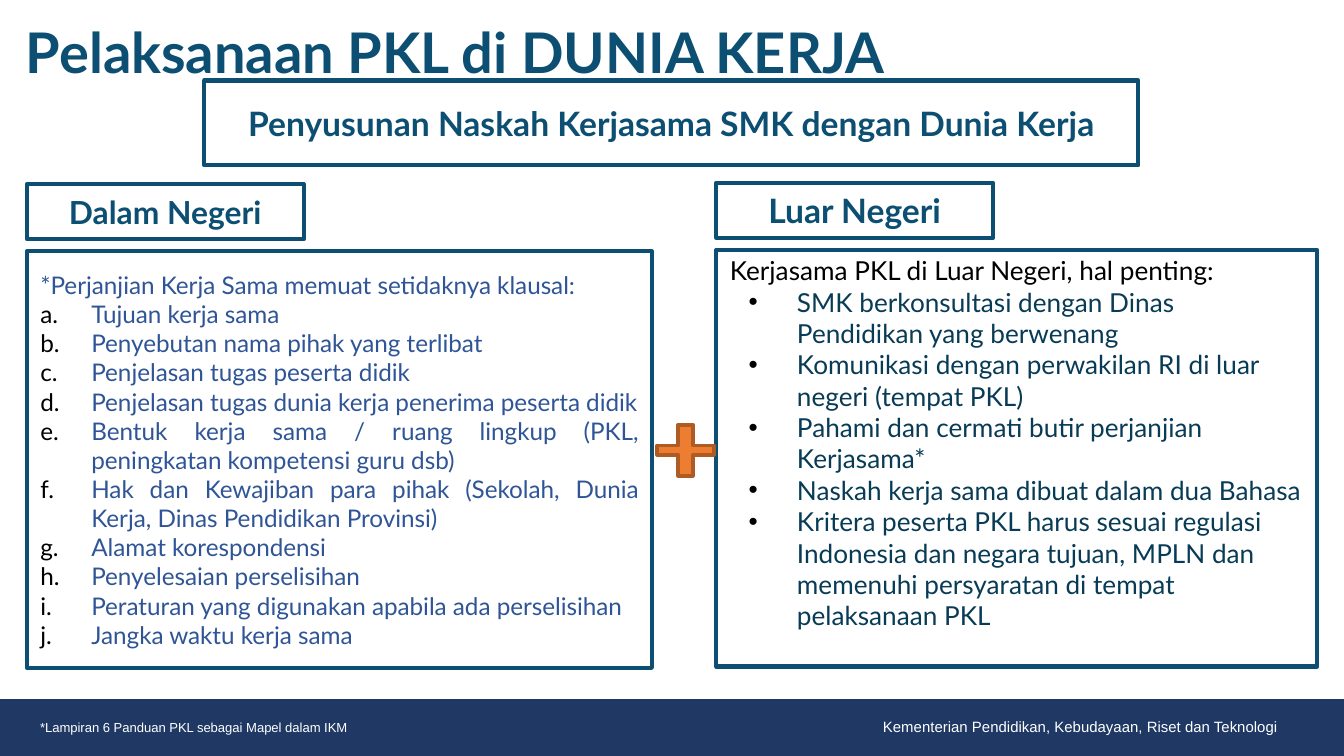
from lxml import etree
from pptx import Presentation
from pptx.dml.color import RGBColor
from pptx.enum.shapes import MSO_SHAPE
from pptx.enum.text import MSO_ANCHOR, MSO_AUTO_SIZE, PP_ALIGN
from pptx.oxml.ns import qn
from pptx.util import Inches, Pt

RECT, PLUS = MSO_SHAPE.RECTANGLE, MSO_SHAPE.CROSS
TOP, MID = MSO_ANCHOR.TOP, MSO_ANCHOR.MIDDLE
LEFT, MIDDLE, RIGHT = PP_ALIGN.LEFT, PP_ALIGN.CENTER, PP_ALIGN.RIGHT
FULL = PP_ALIGN.JUSTIFY
FIXED = MSO_AUTO_SIZE.NONE
TEAL, NAVY, WHITE, BLACK = "0C4F72", "1F3864", "FFFFFF", "000000"
rgb = RGBColor.from_string


def setup(box, at, pad=0.1, anchor=MID, edge=None):
    box.left, box.top, box.width, box.height = [Inches(v) for v in at]
    frame = box.text_frame
    frame.auto_size = FIXED
    frame.word_wrap = True
    frame.vertical_anchor = anchor
    frame.margin_left = frame.margin_right = Inches(0.1)
    frame.margin_top = frame.margin_bottom = Inches(pad)
    if edge:
        box.fill.background()
        box.line.color.rgb = rgb(edge)
        box.line.width = Pt(2.25)
    return frame


def write(para, text, size, color, align=LEFT, face="Lato", bold=False, mark=None, hang=(0, 0)):
    para.text = text
    para.alignment = align
    para.space_before = Pt(0)
    props = para._p.get_or_add_pPr()
    props.set("marL", str(Inches(hang[0])))
    props.set("indent", str(Inches(hang[1])))
    if mark:
        tint = etree.SubElement(props, qn("a:buClr"))
        etree.SubElement(tint, qn("a:srgbClr"), val=BLACK)
        etree.SubElement(props, qn("a:" + mark[0]), **mark[1])
    else:
        etree.SubElement(props, qn("a:buNone"))
    font = para.font
    font.name, font.size, font.bold = face, Pt(size), bold
    font.color.rgb = rgb(color)


deck = Presentation()
deck.slide_width = Inches(10)
deck.slide_height = Inches(10 * 9 / 16)
slide = deck.slides.add_slide(deck.slide_layouts[3])
shapes = slide.shapes
title, left, right = slide.placeholders

frame = setup(title, (-0.82, 0.03, 8.42, 0.53), anchor=TOP)
write(frame.paragraphs[0], "Pelaksanaan PKL di DUNIA KERJA", 30, TEAL, MIDDLE, bold=True)

lists = [
    (left, (0.2, 1.87, 4.65, 3.1), 13, "2F5597", "2F5597", FULL,
     ("buAutoNum", {"type": "alphaLcPeriod"}), (0.38, -0.38),
     "*Perjanjian Kerja Sama memuat setidaknya klausal:",
     ["Tujuan kerja sama",
      "Penyebutan nama pihak yang terlibat",
      "Penjelasan tugas peserta didik",
      "Penjelasan tugas dunia kerja penerima peserta didik",
      "Bentuk kerja sama / ruang lingkup (PKL, peningkatan kompetensi guru dsb)",
      "Hak dan Kewajiban para pihak (Sekolah, Dunia Kerja, Dinas Pendidikan Provinsi)",
      "Alamat korespondensi",
      "Penyelesaian perselisihan",
      "Peraturan yang digunakan apabila ada perselisihan",
      "Jangka waktu kerja sama"]),
    (right, (5.33, 1.86, 4.47, 3.1), 14, BLACK, "083B55", LEFT,
     ("buChar", {"char": "•"}), (0.5, -0.36),
     "Kerjasama PKL di Luar Negeri, hal penting:",
     ["SMK berkonsultasi dengan Dinas Pendidikan yang berwenang",
      "Komunikasi dengan perwakilan RI di luar negeri (tempat PKL)",
      "Pahami dan cermati butir perjanjian Kerjasama*",
      "Naskah kerja sama dibuat dalam dua Bahasa",
      "Kritera peserta PKL harus sesuai regulasi Indonesia dan negara tujuan, "
      "MPLN dan memenuhi persyaratan di tempat pelaksanaan PKL"]),
]
for box, at, size, dark, color, align, mark, hang, head, items in lists:
    frame = setup(box, at, edge=TEAL)
    write(frame.paragraphs[0], head, size, dark)
    for item in items:
        write(frame.add_paragraph(), item, size, color, align, mark=mark, hang=hang)
right.text_frame.margin_bottom = Inches(0.33)

heads = [
    ("Penyusunan Naskah Kerjasama SMK dengan Dunia Kerja", (1.52, 0.6, 6.95, 0.63), 18),
    ("Dalam Negeri", (0.2, 1.37, 2.06, 0.41), 17),
    ("Luar Negeri", (5.33, 1.36, 2.06, 0.41), 18),
]
for text, at, size in heads:
    box = shapes.add_shape(RECT, 0, 0, 0, 0)
    box.shadow.inherit = False
    frame = setup(box, at, edge=TEAL)
    write(frame.paragraphs[0], text, size, TEAL, MIDDLE, bold=True)

blocks = [
    (PLUS, (4.89, 3.16, 0.42, 0.38), "ED7D31", "AF5C24", 2),
    (RECT, (0, 5.21, 10, 0.41), NAVY, NAVY, 1),
]
for kind, at, fill, edge, width in blocks:
    block = shapes.add_shape(kind, *[Inches(v) for v in at])
    block.shadow.inherit = False
    block.fill.solid()
    block.fill.fore_color.rgb = rgb(fill)
    block.line.color.rgb = rgb(edge)
    block.line.width = Pt(width)
    if kind == PLUS:
        block.adjustments[0] = 0.41

notes = [
    ("*Lampiran 6 Panduan PKL sebagai Mapel dalam IKM", (0.2, 5.31, 2.96, 0.2), 7, LEFT),
    ("Kementerian Pendidikan, Kebudayaan, Riset dan Teknologi", (5.67, 5.31, 3.91, 0.2), 8, RIGHT),
]
for text, at, size, align in notes:
    frame = setup(shapes.add_textbox(0, 0, 0, 0), at, pad=0.04)
    write(frame.paragraphs[0], text, size, WHITE, align, "Arial")
frame.margin_right = Inches(0.07)

deck.save("out.pptx")
